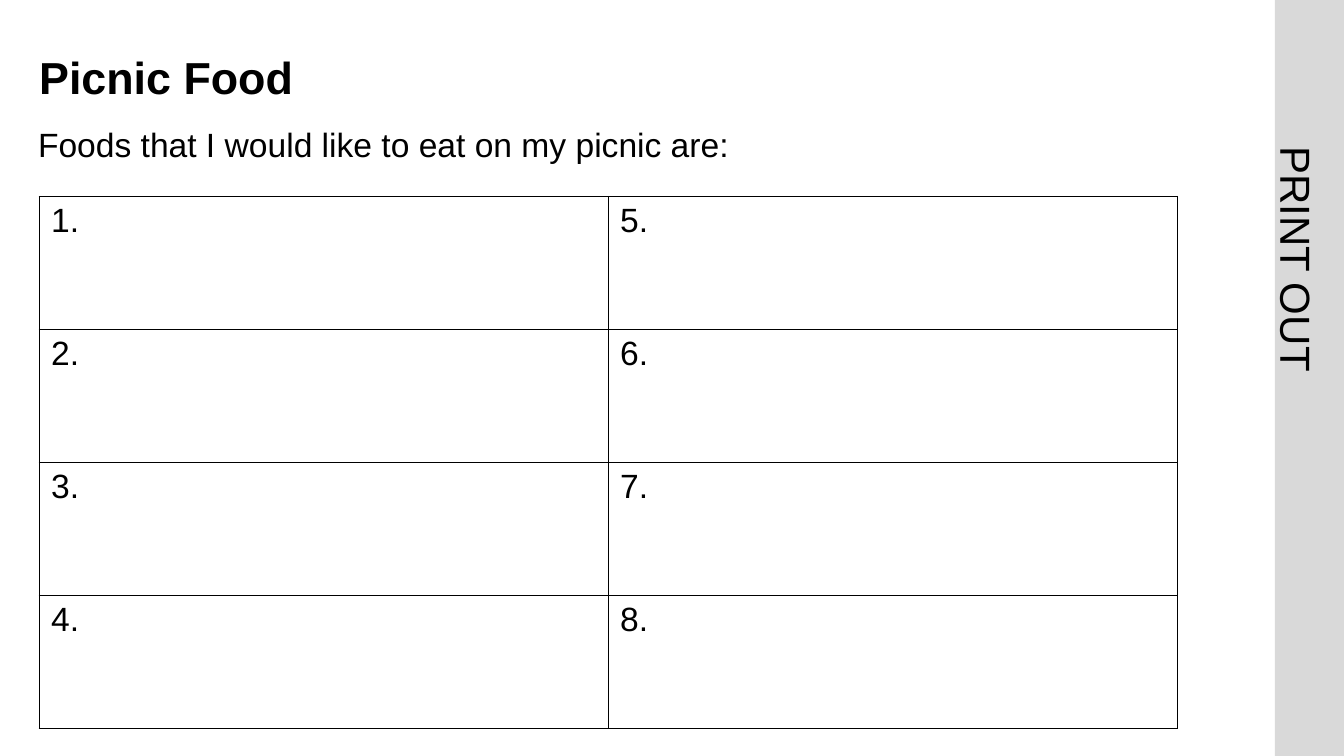
"""Build the picnic food worksheet slide."""
from dataclasses import dataclass, field
from typing import Any

from lxml.etree import SubElement
from pptx import Presentation
from pptx.dml.color import RGBColor
from pptx.enum.shapes import MSO_SHAPE
from pptx.enum.text import MSO_ANCHOR, MSO_AUTO_SIZE, PP_ALIGN
from pptx.oxml import parse_xml
from pptx.oxml.ns import nsdecls, qn
from pptx.slide import Slide
from pptx.table import _Cell as Cell
from pptx.text.text import TextFrame
from pptx.util import Cm, Pt

BLACK = RGBColor(0x00, 0x00, 0x00)
BAND_GREY = RGBColor(0xD9, 0xD9, 0xD9)
FONT = "Arial"
SLIDE_WIDTH, SLIDE_HEIGHT = 33.87, 19.05
BAND_LEFT = 32.13
TABLE_LEFT, TABLE_TOP = 0.99, 4.95
COLUMN_WIDTH, ROW_HEIGHT = 14.34, 3.35
ROWS, COLUMNS = 4, 2
CELL_MARGINS = (0.3, 0.15, 0.3, 0.15)


@dataclass
class Label:
    text: str
    left: float
    top: float
    width: float
    height: float
    rotation: float = 0
    auto_size: MSO_AUTO_SIZE = MSO_AUTO_SIZE.SHAPE_TO_FIT_TEXT
    anchor: MSO_ANCHOR = MSO_ANCHOR.TOP
    margins: tuple[float, float, float, float] = (0.25, 0.13, 0.25, 0.13)
    style: dict[str, Any] = field(default_factory=dict)


LABELS = [
    Label("PRINT OUT", 28.12, 5.61, 10.19, 1.83, rotation=90, margins=(0, 0, 0, 0),
          style={"size": 30, "align": PP_ALIGN.CENTER, "line_spacing": Pt(58.8)}),
    Label("Picnic Food", 0.99, 1.02, 30.56, 1.98, auto_size=MSO_AUTO_SIZE.NONE,
          anchor=MSO_ANCHOR.MIDDLE, margins=(0, 0.13, 0.25, 0.13),
          style={"size": 32, "bold": True, "line_spacing": 0.9}),
    Label("Foods that I would like to eat on my picnic are:", 0.71, 3, 31.85, 1.27),
]


def write_text(frame: TextFrame, text: str, *, size: float = 24, bold: bool = False,
               align: PP_ALIGN = PP_ALIGN.LEFT, line_spacing: float | None = None) -> None:
    """Write one formatted paragraph into a text frame."""
    paragraph = frame.paragraphs[0]
    paragraph.alignment = align
    paragraph.line_spacing = line_spacing
    run = paragraph.add_run()
    run.text = text
    run.font.name = FONT
    run.font.size = Pt(size)
    run.font.bold = bold
    run.font.color.rgb = BLACK


def set_margins(target: TextFrame | Cell, margins: tuple[float, float, float, float]) -> None:
    """Set the left, top, right and bottom margins in centimetres."""
    (target.margin_left, target.margin_top,
     target.margin_right, target.margin_bottom) = map(Cm, margins)


def add_band(slide: Slide) -> None:
    """Add the grey band along the right edge."""
    band = slide.shapes.add_shape(MSO_SHAPE.RECTANGLE, Cm(BAND_LEFT), 0,
                                  Cm(SLIDE_WIDTH - BAND_LEFT), Cm(SLIDE_HEIGHT))
    band.shadow.inherit = False
    band.fill.solid()
    band.fill.fore_color.rgb = BAND_GREY
    band.line.fill.background()


def add_label(slide: Slide, label: Label) -> None:
    """Add one text box."""
    shape = slide.shapes.add_textbox(Cm(label.left), Cm(label.top),
                                     Cm(label.width), Cm(label.height))
    shape.rotation = label.rotation
    frame = shape.text_frame
    frame.word_wrap = True
    frame.auto_size = label.auto_size
    frame.vertical_anchor = label.anchor
    set_margins(frame, label.margins)
    write_text(frame, label.text, **label.style)


def set_borders(cell: Cell) -> None:
    """Draw a thin black line on every side of a cell."""
    properties = cell._tc.get_or_add_tcPr()
    for index, side in enumerate(("lnL", "lnR", "lnT", "lnB")):
        line = parse_xml(f'<a:{side} {nsdecls("a")} w="{Pt(1)}"/>')
        fill = SubElement(line, qn("a:solidFill"))
        SubElement(fill, qn("a:srgbClr"), val=str(BLACK))
        properties.insert(index, line)


def add_food_table(slide: Slide) -> None:
    """Add the table with answer spaces numbered down each column."""
    table = slide.shapes.add_table(ROWS, COLUMNS, Cm(TABLE_LEFT), Cm(TABLE_TOP),
                                   Cm(COLUMNS * COLUMN_WIDTH), Cm(ROWS * ROW_HEIGHT)).table
    table.first_row = table.horz_banding = False
    for column in table.columns:
        column.width = Cm(COLUMN_WIDTH)
    for row_index, row in enumerate(table.rows):
        row.height = Cm(ROW_HEIGHT)
        for column_index, cell in enumerate(row.cells):
            cell.fill.background()
            set_borders(cell)
            set_margins(cell, CELL_MARGINS)
            write_text(cell.text_frame, f"{column_index * ROWS + row_index + 1}.")


def main() -> None:
    """Create the presentation and save it."""
    presentation = Presentation()
    presentation.slide_width = Cm(SLIDE_WIDTH)
    presentation.slide_height = Cm(SLIDE_HEIGHT)
    slide = presentation.slides.add_slide(presentation.slide_layouts[6])
    add_band(slide)
    for label in LABELS:
        add_label(slide, label)
    add_food_table(slide)
    presentation.save("out.pptx")


if __name__ == "__main__":
    main()
